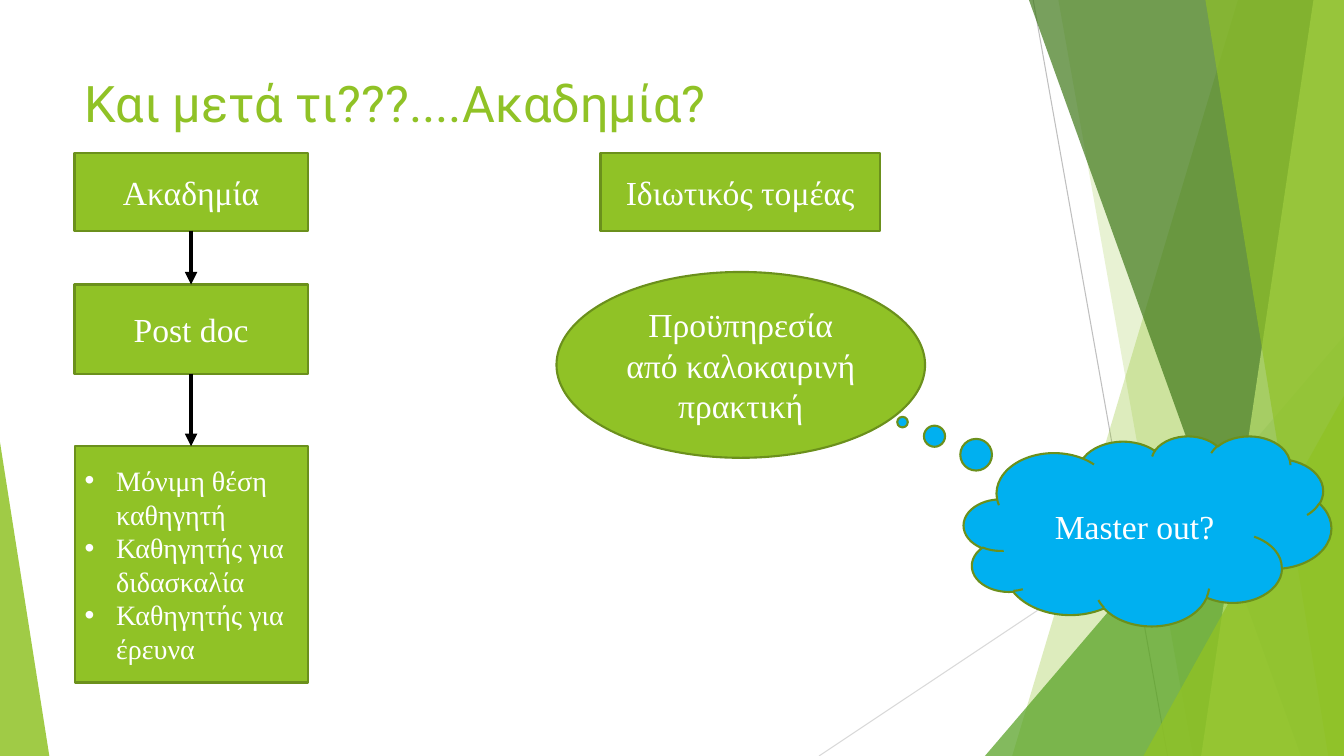
from lxml.etree import SubElement
from pptx import Presentation
from pptx.dml.color import RGBColor
from pptx.enum.shapes import MSO_CONNECTOR, MSO_SHAPE
from pptx.enum.text import MSO_ANCHOR, MSO_AUTO_SIZE, PP_ALIGN
from pptx.oxml.ns import qn
from pptx.util import Pt

PX = 9525  # 96 px to the inch
WIDTH, HEIGHT = 1280, 720

WHITE = RGBColor(0xFF, 0xFF, 0xFF)
BLACK = RGBColor(0x00, 0x00, 0x00)
GREEN = RGBColor(0x90, 0xC2, 0x26)
OUTLINE = RGBColor(0x6B, 0x90, 0x1C)
MID_GREEN = RGBColor(0x54, 0xA0, 0x21)
DARK_GREEN = RGBColor(0x3F, 0x78, 0x19)
PALE_GREEN = RGBColor(0xC0, 0xE4, 0x74)
SKY = RGBColor(0x00, 0xB0, 0xF0)
GREY = RGBColor(0xBF, 0xBF, 0xBF)
LIGHT_GREY = RGBColor(0xD9, 0xD9, 0xD9)


class SlideBuilder:
    title_font = "Roboto"
    body_font = "Times New Roman"

    def __init__(self, page):
        self.page = page
        self.shapes = page.shapes

    def place(self, shape, left, top, width, height):
        shape.left, shape.top = left * PX, top * PX
        shape.width, shape.height = width * PX, height * PX

    def style_text(self, para, font, size, color):
        for span in para.runs:
            span.font.name = font
            span.font.size = Pt(size)
            span.font.color.rgb = color

    def paint(self, shape, color):
        shape.fill.solid()
        shape.fill.fore_color.rgb = color
        shape.line.color.rgb = OUTLINE
        shape.line.width = Pt(1.5)

    def tint(self, shape, color, opacity):
        shape.shadow.inherit = False
        shape.fill.solid()
        shape.fill.fore_color.rgb = color
        shape.line.fill.background()
        solid_color = shape.fill._xPr.find(".//" + qn("a:srgbClr"))
        SubElement(solid_color, qn("a:alpha"), val=str(opacity * 1000))

    def band(self, top_x, bottom_x, color, opacity):
        """Full-height strip from a slanted left edge to the slide's right edge."""
        outline = self.shapes.build_freeform(top_x, 0, scale=PX)
        outline.add_line_segments([(WIDTH, 0), (WIDTH, HEIGHT), (bottom_x, HEIGHT)])
        self.tint(outline.convert_to_shape(), color, opacity)

    def corner(self, left, top, width, apex, color, opacity):
        """Triangle standing on the slide's bottom edge."""
        shape = self.shapes.add_shape(MSO_SHAPE.ISOSCELES_TRIANGLE, 0, 0, 0, 0)
        self.place(shape, left, top, width, HEIGHT - top)
        shape.adjustments[0] = apex
        self.tint(shape, color, opacity)

    def line(self, start, end, color, weight):
        points = [value * PX for value in (*start, *end)]
        connector = self.shapes.add_connector(MSO_CONNECTOR.STRAIGHT, *points)
        connector.line.color.rgb = color
        connector.line.width = Pt(weight)
        SubElement(connector._element.spPr, qn("a:effectLst"))
        return connector

    def arrow(self, upper, lower):
        connector = self.line((0, 0), (0, 0), BLACK, 3)
        connector.begin_connect(upper, 2)
        connector.end_connect(lower, 0)
        SubElement(connector.line._get_or_add_ln(), qn("a:tailEnd"), type="triangle")

    def title(self, text, *bounds):
        box = self.shapes.title
        self.place(box, *bounds)
        frame = box.text_frame
        frame.text = text
        frame.vertical_anchor = MSO_ANCHOR.TOP
        frame.auto_size = MSO_AUTO_SIZE.NONE
        para = frame.paragraphs[0]
        para.alignment = PP_ALIGN.LEFT
        self.style_text(para, self.title_font, 36, GREEN)

    def label(self, kind, text, *bounds, fill=GREEN, adjustments=()):
        box = self.shapes.add_shape(kind, 0, 0, 0, 0)
        self.place(box, *bounds)
        box.shadow.inherit = False
        self.paint(box, fill)
        for index, value in enumerate(adjustments):
            box.adjustments[index] = value
        frame = box.text_frame
        frame.text = text
        frame.word_wrap = True
        frame.vertical_anchor = MSO_ANCHOR.MIDDLE
        para = frame.paragraphs[0]
        para.alignment = PP_ALIGN.CENTER
        self.style_text(para, self.body_font, 24, WHITE)
        return box

    def bullets(self, items, *bounds):
        box = self.page.placeholders[1]
        self.place(box, *bounds)
        self.paint(box, GREEN)
        frame = box.text_frame
        frame.text = "\n".join(items)
        frame.vertical_anchor = MSO_ANCHOR.MIDDLE
        frame.auto_size = MSO_AUTO_SIZE.NONE
        for para in frame.paragraphs:
            properties = para._p.get_or_add_pPr()
            properties.set("marL", str(30 * PX))
            properties.set("indent", str(-30 * PX))
            SubElement(properties, qn("a:buFont"), typeface="Arial")
            SubElement(properties, qn("a:buChar"), char="•")
            para.space_before = Pt(0)
            self.style_text(para, self.body_font, 20, WHITE)
        return box


def main():
    deck = Presentation()
    deck.slide_width, deck.slide_height = WIDTH * PX, HEIGHT * PX
    slide = SlideBuilder(deck.slides.add_slide(deck.slide_layouts[1]))

    # Background facets
    slide.line((984, 0), (1112, HEIGHT), GREY, 0.75)
    slide.line((WIDTH, 387), (780, HEIGHT), LIGHT_GREY, 0.75)
    slide.band(1179, 964, GREEN, 30)
    slide.band(1008, 1136, GREEN, 20)
    slide.corner(938, 320, 342, 1, MID_GREEN, 72)
    slide.band(980, 1239, DARK_GREEN, 70)
    slide.band(1251, 1144, PALE_GREEN, 70)
    slide.band(1148, 1265, GREEN, 65)
    slide.corner(1089, 377, 191, 1, GREEN, 80)
    slide.corner(0, 421, 47, 0, GREEN, 85)

    slide.title("Και μετά τι???....Ακαδημία?", 71, 64, 902, 138)

    # Academic path
    academia = slide.label(MSO_SHAPE.RECTANGLE, "Ακαδημία", 71, 146, 222, 74)
    post_doc = slide.label(MSO_SHAPE.RECTANGLE, "Post doc", 71, 271, 222, 85)
    positions = slide.bullets(
        ["Μόνιμη θέση καθηγητή", "Καθηγητής για διδασκαλία", "Καθηγητής για έρευνα"],
        71, 425, 222, 225)
    slide.arrow(academia, post_doc)
    slide.arrow(post_doc, positions)

    # Private sector
    slide.label(MSO_SHAPE.RECTANGLE, "Ιδιωτικός τομέας", 572, 146, 266, 74)
    slide.label(MSO_SHAPE.OVAL, "Προϋπηρεσία από καλοκαιρινή πρακτική",
                530, 259, 351, 177)
    slide.label(MSO_SHAPE.CLOUD_CALLOUT, "Master out?", 918, 415, 350, 181,
                fill=SKY, adjustments=(-0.667, -0.572))

    deck.save("out.pptx")


if __name__ == "__main__":
    main()
